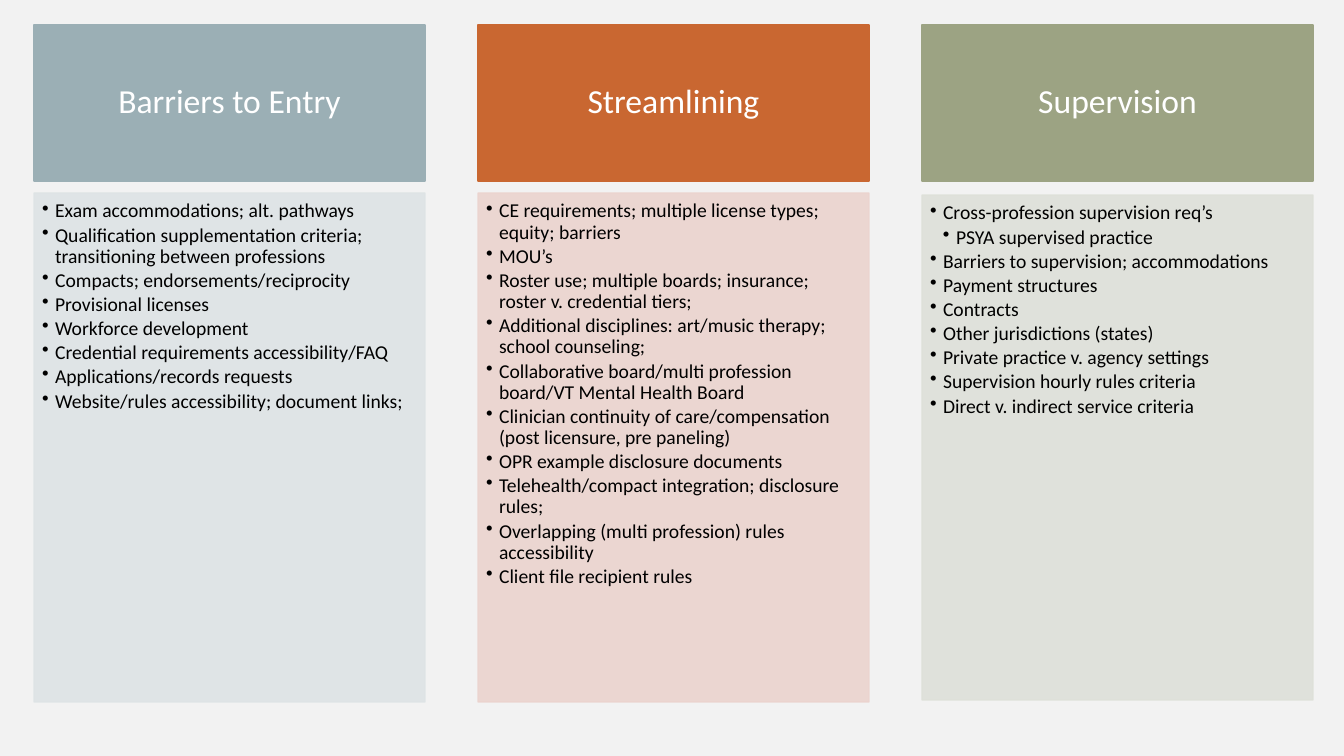
"""Build a slide with three topic columns, each a header above a bulleted list."""
from lxml.etree import SubElement
from pptx import Presentation
from pptx.dml.color import RGBColor
from pptx.enum.shapes import MSO_SHAPE
from pptx.enum.text import MSO_ANCHOR, PP_ALIGN
from pptx.oxml.ns import qn
from pptx.util import Emu, Pt

COLUMNS = [
    {"title": "Barriers to Entry", "header": "9BAFB5", "body": "DEE3E5",
     "top": 193, "height": 509, "points": [
         (0, "Exam accommodations; alt. pathways"),
         (0, "Qualification supplementation criteria; transitioning between professions"),
         (0, "Compacts; endorsements/reciprocity"),
         (0, "Provisional licenses"),
         (0, "Workforce development"),
         (0, "Credential requirements accessibility/FAQ"),
         (0, "Applications/records requests"),
         (0, "Website/rules accessibility; document links;")]},
    {"title": "Streamlining", "header": "C96731", "body": "EBD3CE",
     "top": 193, "height": 509, "points": [
         (0, "CE requirements; multiple license types; equity; barriers"),
         (0, "MOU’s"),
         (0, "Roster use; multiple boards; insurance; roster v. credential tiers;"),
         (0, "Additional disciplines: art/music therapy; school counseling;"),
         (0, "Collaborative board/multi profession board/VT Mental Health Board"),
         (0, "Clinician continuity of care/compensation (post licensure, pre paneling)"),
         (0, "OPR example disclosure documents"),
         (0, "Telehealth/compact integration; disclosure rules;"),
         (0, "Overlapping (multi profession) rules accessibility"),
         (0, "Client file recipient rules")]},
    {"title": "Supervision", "header": "9CA383", "body": "DEE0D9",
     "top": 195, "height": 505, "points": [
         (0, "Cross-profession supervision req’s"),
         (1, "PSYA supervised practice"),
         (0, "Barriers to supervision; accommodations"),
         (0, "Payment structures"),
         (0, "Contracts"),
         (0, "Other jurisdictions (states)"),
         (0, "Private practice v. agency settings"),
         (0, "Supervision hourly rules criteria"),
         (0, "Direct v. indirect service criteria")]},
]
THEME = {
    "background": "F2F2F2",
    "font": "Calibri",
    "header": {"size": Pt(24), "color": "FFFFFF"},
    "body": {"size": Pt(14), "color": "000000"},
    "body_opacity": 90,
}
SLIDE_WIDTH, SLIDE_HEIGHT = 1344, 756
LEFT, PITCH, WIDTH = 34, 444, 391
HEADER_TOP, HEADER_HEIGHT = 25, 156
BULLET_INDENT = 13


def px(length):
    return Emu(round(length * 914400 / 100.8))


def apply(target, values):
    for name, value in values.items():
        setattr(target, name, value)


def add_box(page, place, color, insets, anchor, opacity=100):
    box = page.shapes.add_shape(MSO_SHAPE.RECTANGLE, *map(px, place))
    box.shadow.inherit = False
    box.fill.solid()
    box.line.width = Pt(1)
    for paint in (box.fill.fore_color, box.line.color):
        paint.rgb = RGBColor.from_string(color)
    if opacity < 100:
        for tint in box.element.spPr.iter(qn("a:srgbClr")):
            SubElement(tint, qn("a:alpha"), val=str(opacity * 1000))
    sides = ("margin_left", "margin_top", "margin_right", "margin_bottom")
    apply(box.text_frame, dict(zip(sides, map(px, insets))))
    apply(box.text_frame, {"word_wrap": True, "vertical_anchor": anchor})
    return box


def write(para, text, style, values):
    apply(para, {"line_spacing": 0.9, **values})
    span = para.add_run()
    span.text = text
    apply(span.font, {"name": THEME["font"], "size": style["size"]})
    span.font.color.rgb = RGBColor.from_string(style["color"])


def add_bullet(para, level):
    properties = para._p.get_or_add_pPr()
    properties.set("marL", str(px(BULLET_INDENT * (level + 1))))
    properties.set("indent", str(-px(BULLET_INDENT)))
    SubElement(properties, qn("a:buChar"), char="•")


def add_column(page, left, column):
    header = add_box(page, (left, HEADER_TOP, WIDTH, HEADER_HEIGHT), column["header"],
                     (19, 11, 19, 11), MSO_ANCHOR.MIDDLE)
    write(header.text_frame.paragraphs[0], column["title"], THEME["header"],
          {"alignment": PP_ALIGN.CENTER})
    body = add_box(page, (left, column["top"], WIDTH, column["height"]), column["body"],
                   (8, 8, 11, 12), MSO_ANCHOR.TOP, THEME["body_opacity"])
    frame = body.text_frame
    for index, (level, text) in enumerate(column["points"]):
        para = frame.add_paragraph() if index else frame.paragraphs[0]
        write(para, text, THEME["body"],
              {"alignment": PP_ALIGN.LEFT, "level": level, "space_after": Pt(2.1)})
        add_bullet(para, level)


def main():
    deck = Presentation()
    apply(deck, {"slide_width": px(SLIDE_WIDTH), "slide_height": px(SLIDE_HEIGHT)})
    page = deck.slides.add_slide(deck.slide_layouts[6])
    page.background.fill.solid()
    page.background.fill.fore_color.rgb = RGBColor.from_string(THEME["background"])
    for index, column in enumerate(COLUMNS):
        add_column(page, LEFT + index * PITCH, column)
    deck.save("out.pptx")


if __name__ == "__main__":
    main()
